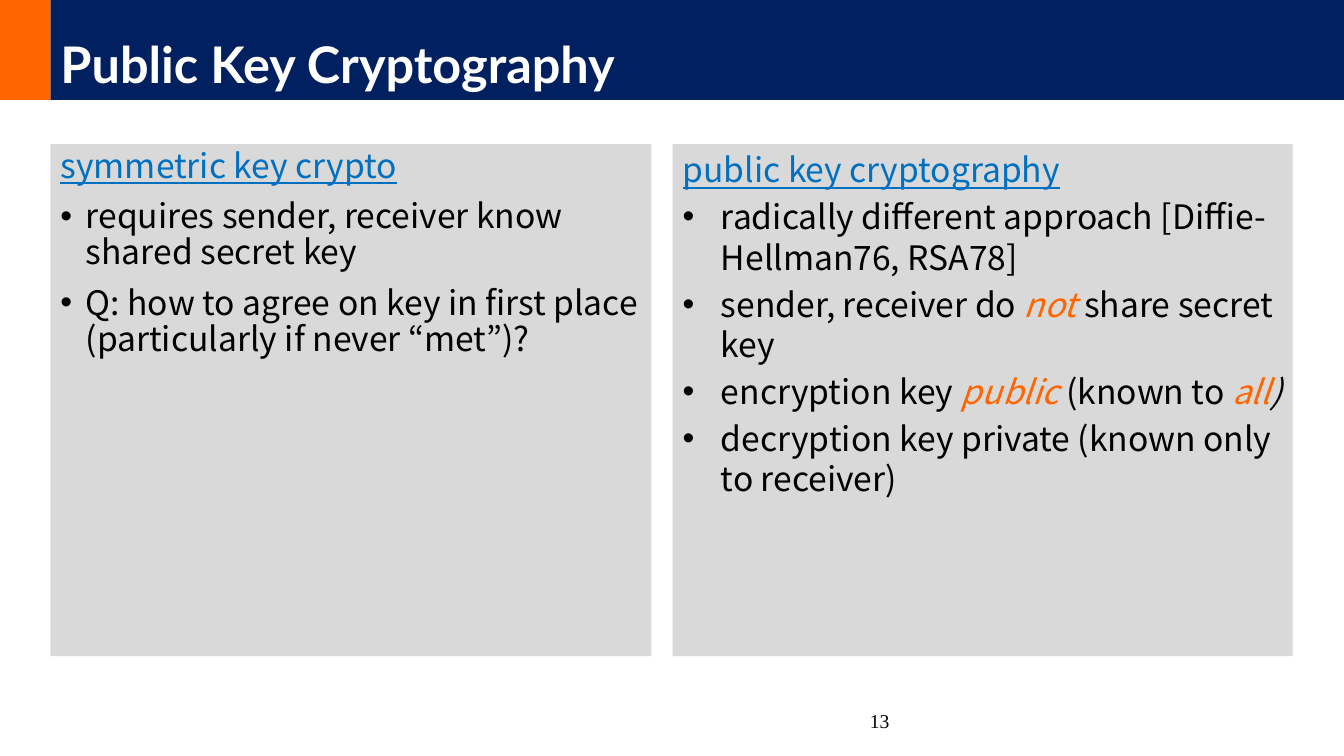
from dataclasses import dataclass

from lxml import etree
from pptx import Presentation
from pptx.dml.color import RGBColor
from pptx.enum.shapes import MSO_SHAPE
from pptx.enum.text import MSO_ANCHOR, MSO_AUTO_SIZE, PP_ALIGN
from pptx.oxml.ns import qn
from pptx.util import Inches, Pt

RECTANGLE = MSO_SHAPE.RECTANGLE
LEFT, RIGHT = PP_ALIGN.LEFT, PP_ALIGN.RIGHT
TOP, MIDDLE, BOTTOM = MSO_ANCHOR.TOP, MSO_ANCHOR.MIDDLE, MSO_ANCHOR.BOTTOM
NO_AUTOFIT = MSO_AUTO_SIZE.NONE

TITLE = "Public Key Cryptography"
PAGE_NUMBER = "13"
PLAIN, STRESSED, SLANTED = "plain", "stressed", "slanted"

# Each point is a list of (wording, emphasis) pieces.
COLUMNS = [
    {
        "heading": "symmetric key crypto",
        "points": [
            [("requires sender, receiver know shared secret key", PLAIN)],
            [("Q: how to agree on key in first place "
              "(particularly if never “met”)?", PLAIN)],
        ],
        "left": 0.5, "width": 5.96,
        "indent": 0.25, "line_spacing": 0.9, "space_before": 10,
    },
    {
        "heading": "public key cryptography",
        "points": [
            [("radically different approach [Diffie-Hellman76, RSA78]", PLAIN)],
            [("sender, receiver do ", PLAIN), ("not ", STRESSED),
             ("share secret key", PLAIN)],
            [("encryption key ", PLAIN), ("public ", STRESSED),
             ("(known to ", PLAIN), ("all", STRESSED), (")", SLANTED)],
            [("decryption key private (known only to receiver)", PLAIN)],
        ],
        "left": 6.67, "width": 6.15,
        "indent": 0.38, "line_spacing": 1.0, "space_before": 4.8,
    },
]

SLIDE_WIDTH, SLIDE_HEIGHT = 13.33, 7.5
BANNER_HEIGHT, ACCENT_WIDTH = 0.99, 0.5
PANEL_TOP, PANEL_HEIGHT = 1.43, 5.08


@dataclass(frozen=True)
class Theme:
    banner: RGBColor = RGBColor(0x00, 0x20, 0x60)
    accent: RGBColor = RGBColor(0xFF, 0x66, 0x00)
    panel: RGBColor = RGBColor(0xD9, 0xD9, 0xD9)
    heading: RGBColor = RGBColor(0x00, 0x70, 0xC0)
    text: RGBColor = RGBColor(0x00, 0x00, 0x00)
    title_text: RGBColor = RGBColor(0xFF, 0xFF, 0xFF)
    title_font: str = "Lato"
    body_font: str = "Noto Sans CJK KR"
    number_font: str = "Times New Roman"
    title_size: int = 36
    body_size: int = 24
    number_size: int = 14


THEME = Theme()


def place(shape, left, top, width, height):
    shape.left, shape.top = Inches(left), Inches(top)
    shape.width, shape.height = Inches(width), Inches(height)


def paint(shape, color):
    shape.fill.solid()
    shape.fill.fore_color.rgb = color


def prepare_frame(frame, anchor):
    frame.word_wrap = True
    frame.auto_size = NO_AUTOFIT
    frame.vertical_anchor = anchor


def style_run(run, font, size, color):
    run.font.name, run.font.size = font, Pt(size)
    run.font.color.rgb = color


def set_bullet(paragraph, indent, bullet):
    """Hang the paragraph by indent, with the bullet or with none."""
    properties = paragraph._p.get_or_add_pPr()
    properties.set("marL", str(Inches(indent)))
    properties.set("indent", str(-Inches(indent)))
    if bullet:
        etree.SubElement(properties, qn("a:buFont"), typeface="Arial")
        etree.SubElement(properties, qn("a:buChar"), char=bullet)
    else:
        etree.SubElement(properties, qn("a:buNone"))


def fill_panel(panel, column):
    place(panel, column["left"], PANEL_TOP, column["width"], PANEL_HEIGHT)
    paint(panel, THEME.panel)
    frame = panel.text_frame
    prepare_frame(frame, TOP)
    lines = [[(column["heading"], PLAIN)]] + column["points"]
    for number, pieces in enumerate(lines):
        is_heading = number == 0
        paragraph = frame.paragraphs[0] if is_heading else frame.add_paragraph()
        paragraph.line_spacing = column["line_spacing"]
        paragraph.space_before = Pt(column["space_before"])
        set_bullet(paragraph, column["indent"], None if is_heading else "•")
        for wording, emphasis in pieces:
            run = paragraph.add_run()
            run.text = wording
            color = THEME.accent if emphasis == STRESSED else THEME.text
            style_run(run, THEME.body_font, THEME.body_size,
                      THEME.heading if is_heading else color)
            run.font.underline = is_heading
            run.font.italic = emphasis != PLAIN


def add_banner(slide):
    accent = slide.shapes.add_shape(RECTANGLE, 0, 0, Inches(ACCENT_WIDTH),
                                    Inches(BANNER_HEIGHT))
    paint(accent, THEME.accent)
    accent.line.fill.background()
    accent.shadow.inherit = False

    title = slide.shapes.title
    place(title, ACCENT_WIDTH, 0, SLIDE_WIDTH - ACCENT_WIDTH, BANNER_HEIGHT)
    paint(title, THEME.banner)
    prepare_frame(title.text_frame, BOTTOM)
    title.text_frame.text = TITLE
    paragraph = title.text_frame.paragraphs[0]
    paragraph.alignment, paragraph.line_spacing = LEFT, 0.9
    style_run(paragraph.runs[0], THEME.title_font, THEME.title_size,
              THEME.title_text)
    paragraph.runs[0].font.bold = True


def add_page_number(slide):
    box = slide.shapes.add_textbox(0, 0, 0, 0)
    place(box, 4.42, 6.95, 4.5, 0.4)
    prepare_frame(box.text_frame, MIDDLE)
    box.text_frame.text = PAGE_NUMBER
    paragraph = box.text_frame.paragraphs[0]
    paragraph.alignment = RIGHT
    style_run(paragraph.runs[0], THEME.number_font, THEME.number_size, THEME.text)


def main():
    deck = Presentation()
    deck.slide_width, deck.slide_height = Inches(SLIDE_WIDTH), Inches(SLIDE_HEIGHT)
    two_content = deck.slide_layouts.get_by_name("Two Content")
    slide = deck.slides.add_slide(two_content)
    add_banner(slide)
    _, *panels = slide.placeholders
    for panel, column in zip(panels, COLUMNS):
        fill_panel(panel, column)
    add_page_number(slide)
    deck.save("out.pptx")


if __name__ == "__main__":
    main()
